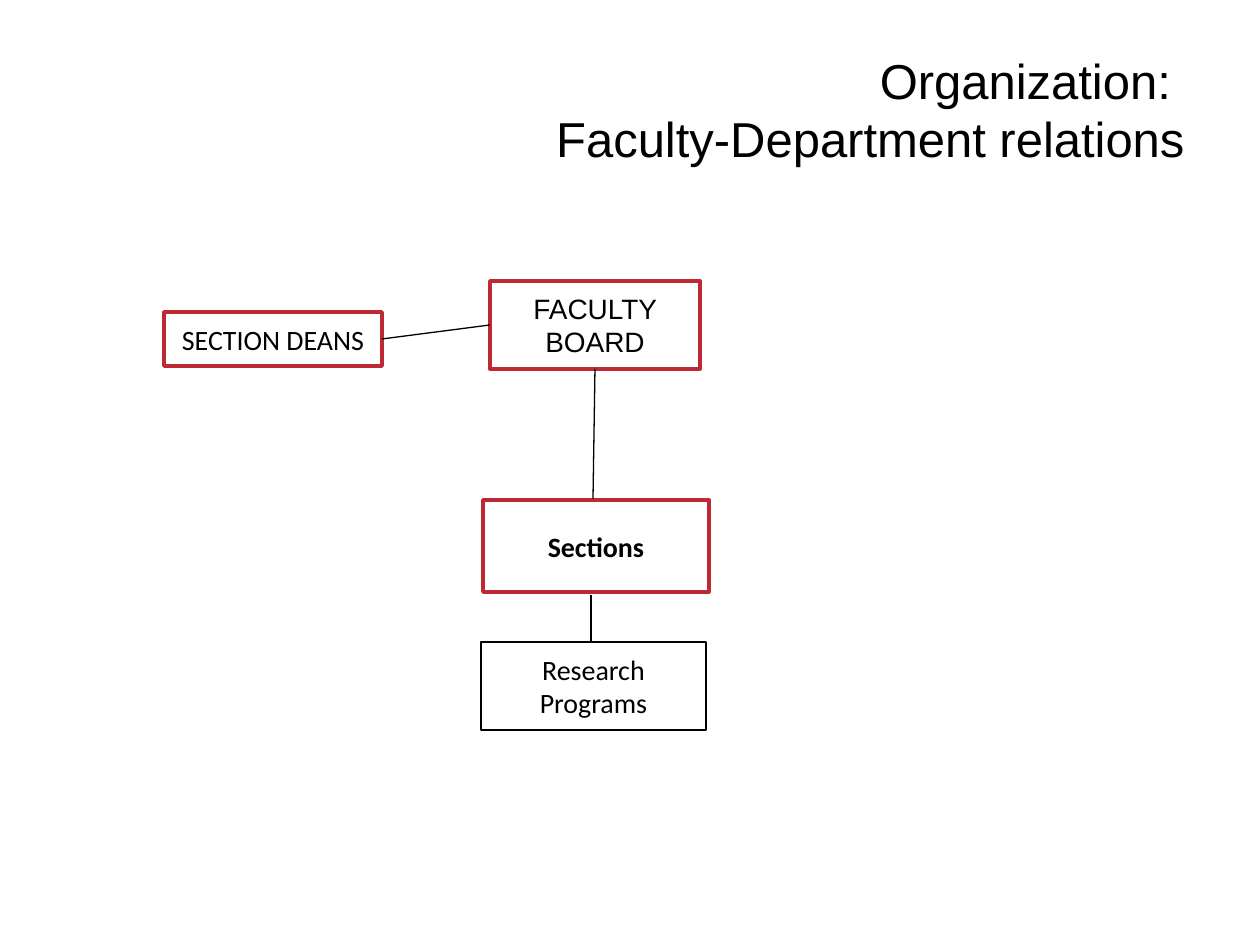
from pptx import Presentation
from pptx.dml.color import RGBColor
from pptx.enum.shapes import MSO_CONNECTOR as CONN, MSO_SHAPE as SHAPE
from pptx.enum.text import MSO_ANCHOR as ANCHOR, PP_ALIGN as ALIGN
from pptx.oxml.ns import qn
from pptx.util import Emu, Pt
from lxml.etree import SubElement

BLACK = RGBColor(0, 0, 0)
WHITE = RGBColor(255, 255, 255)
RED = RGBColor(0xBD, 0x2A, 0x33)
TOP, LEFT, BOTTOM, RIGHT = range(4)


def px(n):
    return Emu(round(n * 914400 / 126))


def set_font(p, name, size, bold=False):
    p.font.name = name
    p.font.size = Pt(size)
    p.font.bold = bold
    p.font.color.rgb = BLACK


def add_title(s, text, x, y, w, h):
    title = s.shapes.title
    title.left, title.top, title.width, title.height = map(px, (x, y, w, h))
    tf = title.text_frame
    tf.text = text
    tf.vertical_anchor = ANCHOR.MIDDLE
    p = tf.paragraphs[0]
    p.alignment = ALIGN.RIGHT
    set_font(p, "Arial", 28)


def add_box(s, text, x, y, w, h, font="Calibri", bold=False, color=RED, weight=2):
    box = s.shapes.add_shape(SHAPE.RECTANGLE, px(x), px(y), px(w), px(h))
    box.shadow.inherit = False
    box.fill.solid()
    box.fill.fore_color.rgb = WHITE
    box.line.color.rgb = color
    box.line.width = Pt(weight)
    tf = box.text_frame
    tf.word_wrap = True
    tf.vertical_anchor = ANCHOR.MIDDLE
    tf.margin_left = tf.margin_right = px(15)
    tf.margin_top = tf.margin_bottom = px(10)
    tf.text = text
    p = tf.paragraphs[0]
    p.alignment = ALIGN.CENTER
    set_font(p, font, 16, bold)
    return box


def add_line(s, x1, y1, x2, y2):
    line = s.shapes.add_connector(CONN.STRAIGHT, px(x1), px(y1), px(x2), px(y2))
    line.line.color.rgb = BLACK
    line.line.width = Pt(0.75)
    SubElement(line._element.spPr, qn("a:effectLst"))
    return line


def main():
    prs = Presentation()
    prs.slide_width, prs.slide_height = px(1260), px(945)
    s = prs.slides.add_slide(prs.slide_layouts[5])

    add_title(s, "Organization: \vFaculty-Department relations", 273, 30, 924, 158)
    board = add_box(s, "FACULTY BOARD", 490, 281, 210, 88, font="Arial")
    deans = add_box(s, "SECTION DEANS", 164, 312, 218, 54)
    add_box(s, "Sections", 483, 500, 226, 92, bold=True)
    add_box(s, "Research Programs", 481, 642, 225, 88, color=BLACK, weight=1)

    board_deans = add_line(s, 490, 325, 382, 339)
    board_deans.begin_connect(board, LEFT)
    board_deans.end_connect(deans, RIGHT)
    board_sections = add_line(s, 595, 369, 593, 499)
    board_sections.begin_connect(board, BOTTOM)
    add_line(s, 591, 595, 591, 642)

    prs.save("out.pptx")


if __name__ == "__main__":
    main()
